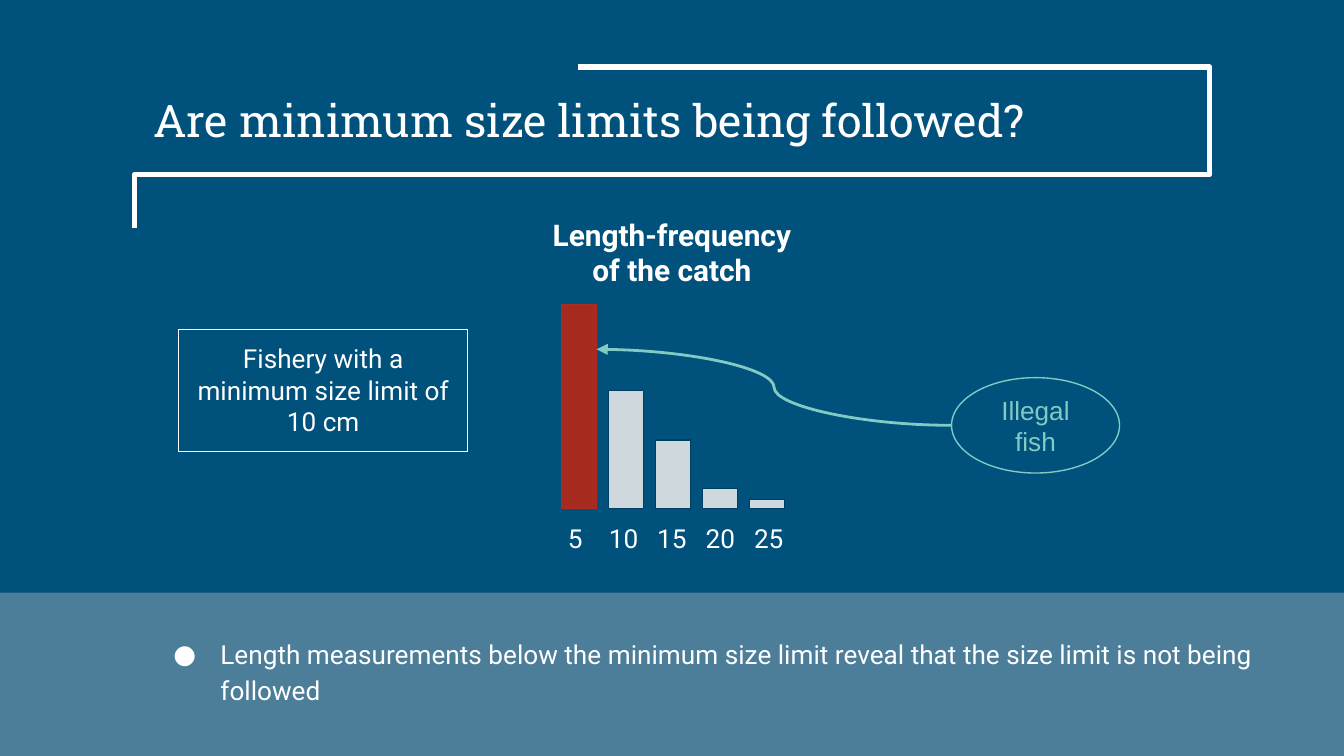
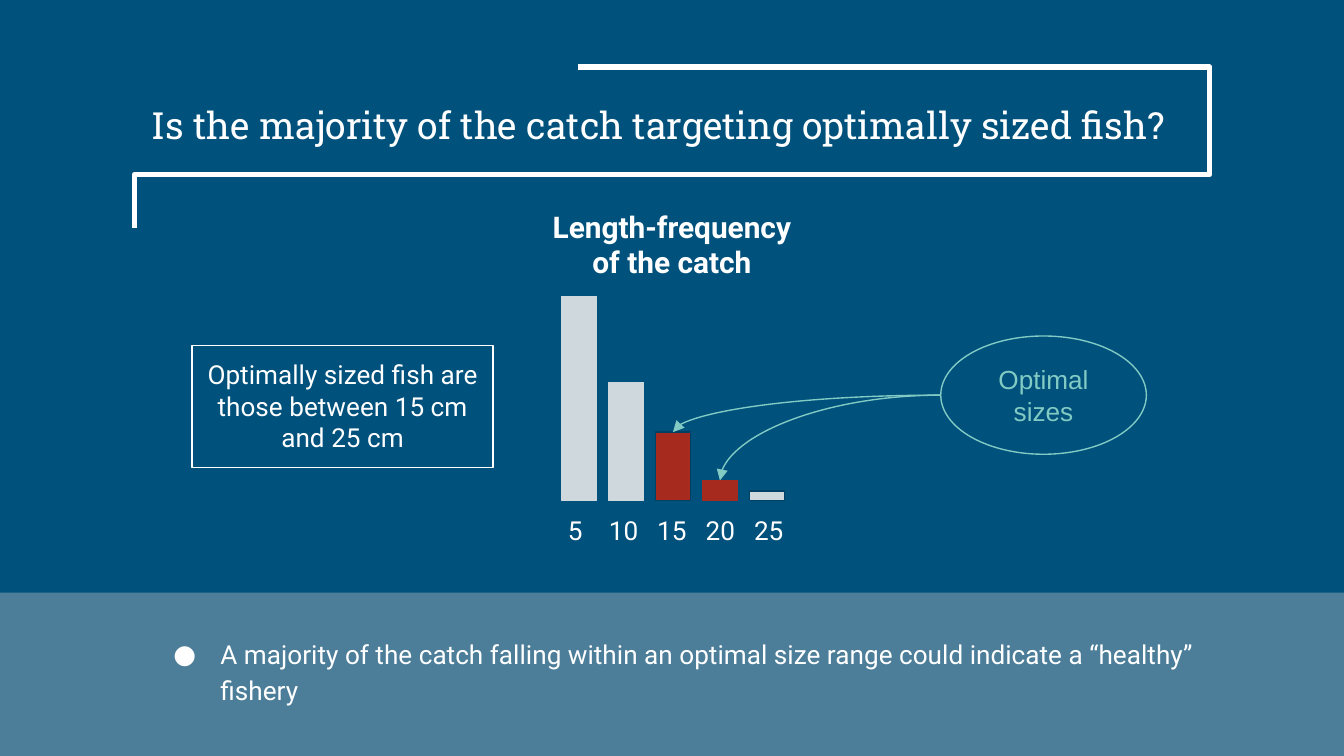
from collections import namedtuple

from lxml.etree import SubElement
from pptx import Presentation
from pptx.dml.color import RGBColor
from pptx.enum.shapes import MSO_CONNECTOR, MSO_SHAPE
from pptx.enum.text import MSO_ANCHOR, MSO_AUTO_SIZE, PP_ALIGN
from pptx.oxml.ns import qn
from pptx.util import Inches, Pt

COLORS = {
    "navy": "00517C", "band": "C9C9C9", "white": "FFFFFF", "teal": "82CBC4",
    "red": "A72A1E", "red edge": "B02C20", "grey": "CFD8DC", "edge": "004065",
}
COLS, ROWS = 100, 56.25
CELL = Inches(0.1)
Box = namedtuple("Box", "x y w h")

FRAME = Box(10.4, 4.7, 79.7, 12.7)
BAND = Box(0, 44.1, COLS, ROWS - 44.1)
LENGTHS = ["5", "10", "15", "20", "25"]
BAR_HEIGHTS = [15.2, 8.8, 5.1, 1.5, 0.7]


def cells(*values):
    return [round(v * CELL) for v in values]


def color(name):
    return RGBColor.from_string(COLORS[name])


def write(sp, text, size=14, font="Roboto", ink="white", bold=False,
          align=PP_ALIGN.CENTER, anchor=MSO_ANCHOR.TOP):
    tf = sp.text_frame
    tf.word_wrap = True
    tf.auto_size = MSO_AUTO_SIZE.NONE
    tf.vertical_anchor = anchor
    tf.margin_left = tf.margin_right = tf.margin_top = tf.margin_bottom = CELL
    p = tf.paragraphs[0]
    p.alignment = align
    p.space_before = Pt(0)
    r = p.add_run()
    r.text = text
    r.font.size = Pt(size)
    r.font.name = font
    r.font.bold = bold
    r.font.color.rgb = color(ink)
    return p


def place(sp, box):
    sp.left, sp.top, sp.width, sp.height = cells(*box)


def paint(sp, fill=None, line=None, width=0.75):
    sp.shadow.inherit = False
    if fill:
        sp.fill.solid()
        sp.fill.fore_color.rgb = color(fill)
    else:
        sp.fill.background()
    if line:
        sp.line.color.rgb = color(line)
        sp.line.width = Pt(width)
    else:
        sp.line.fill.background()


def add_shape(s, kind, box, **look):
    sp = s.shapes.add_shape(kind, *cells(*box))
    paint(sp, **look)
    return sp


def send_to_back(sp):
    sp.element.getparent().insert(2, sp.element)


def add_text(s, box, text, **style):
    write(s.shapes.add_textbox(*cells(*box)), text, **style)


def title_frame(s, box):
    right, middle = box.x + box.w, box.y + 8.3
    builder = s.shapes.build_freeform(box.x + 32.5, box.y, scale=CELL)
    builder.add_line_segments(
        [(right, box.y), (right, middle), (box.x, middle), (box.x, box.y + box.h)],
        close=False)
    sp = builder.convert_to_shape()
    paint(sp, line="white", width=3)
    send_to_back(sp)


def takeaway(s, box, text):
    band = add_shape(s, MSO_SHAPE.RECTANGLE, box, fill="band")
    fill = band.element.spPr.find(qn("a:solidFill"))
    SubElement(fill[0], qn("a:alpha"), val="38000")
    send_to_back(band)

    body = s.placeholders[1]
    place(body, Box(box.x + 10.4, box.y, 84.2, 11.5))
    p = write(body, text, align=PP_ALIGN.LEFT, anchor=MSO_ANCHOR.MIDDLE)
    p.line_spacing = 1.15
    pPr = p._p.get_or_add_pPr()
    pPr.set("marL", str(Inches(0.5)))
    pPr.set("indent", str(-Inches(0.35)))
    bullet_color = SubElement(pPr, qn("a:buClr"))
    SubElement(bullet_color, qn("a:srgbClr"), val=COLORS["white"])
    SubElement(pPr, qn("a:buFont"), typeface="Roboto")
    SubElement(pPr, qn("a:buChar"), char="●")


def length_chart(s, box, looks):
    add_text(s, Box(box.x, box.y, box.w, 7.4), "Length-frequency of the catch",
             size=16, bold=True)
    base = box.y + 22.75
    bars = []
    for i, (label, height, (fill, line)) in enumerate(zip(LENGTHS, BAR_HEIGHTS, looks)):
        bar = Box(box.x + 2.1 + 3.49 * i, base - height, 2.6, height)
        bars.append(add_shape(s, MSO_SHAPE.RECTANGLE, bar, fill=fill, line=line))
        add_text(s, Box(box.x + 0.4 + 3.6 * i, base, 5.4, 4.4), label)
    return bars


def rule_box(s, box, text):
    write(add_shape(s, MSO_SHAPE.RECTANGLE, box, line="white"), text)


def callout(s, box, text):
    sp = add_shape(s, MSO_SHAPE.OVAL, box, line="teal")
    write(sp, text, font="Arial", ink="teal", anchor=MSO_ANCHOR.MIDDLE)
    return sp


def curved_arrow(s, source, x, y, preset="curvedConnector2", width=0.75):
    start_y = source.top + source.height // 2
    line = s.shapes.add_connector(MSO_CONNECTOR.CURVE, source.left, start_y, x, y)
    line.line.color.rgb = color("teal")
    line.line.width = Pt(width)
    spPr = line.element.spPr
    spPr.find(qn("a:prstGeom")).set("prst", preset)
    SubElement(spPr.find(qn("a:ln")), qn("a:tailEnd"), type="triangle")
    SubElement(spPr, qn("a:effectLst"))


def question_slide(prs, title, title_box, title_size, message):
    s = prs.slides.add_slide(prs.slide_layouts[1])
    s.background.fill.solid()
    s.background.fill.fore_color.rgb = color("navy")
    place(s.shapes.title, title_box)
    write(s.shapes.title, title, size=title_size, font="Roboto Slab",
          align=PP_ALIGN.LEFT)
    takeaway(s, BAND, message)
    title_frame(s, FRAME)
    return s


def size_limit_slide(prs):
    s = question_slide(
        prs, "Are minimum size limits being followed?", Box(10.4, 5.9, 79.4, 9.2), 24,
        "Length measurements below the minimum size limit reveal that the size limit "
        "is not being followed")
    looks = [("red", "red edge")] + [("grey", "edge")] * 4
    bars = length_chart(s, Box(39.7, 15.1, 20.6, 27.2), looks)
    rule_box(s, Box(13.3, 24.5, 21.5, 9.1), "Fishery with a minimum size limit of 10 cm")
    illegal = callout(s, Box(70.8, 28.1, 12.5, 7.1), "Illegal fish")
    bar = bars[0]
    curved_arrow(s, illegal, bar.left + bar.width, bar.top + round(0.22 * bar.height),
                 preset="curvedConnector3", width=1.5)


def optimal_size_slide(prs):
    s = question_slide(
        prs, "Is the majority of the catch targeting optimally sized fish?",
        Box(10.3, 6.6, 79.4, 5.5), 20,
        "A majority of the catch falling within an optimal size range could indicate "
        "a “healthy” fishery")
    rule_box(s, Box(14.3, 25.7, 22.4, 9.1),
             "Optimally sized fish are those between 15 cm and 25 cm")
    optimal = callout(s, Box(70, 25, 15.3, 8.8), "Optimal sizes")
    looks = [("grey", "grey")] * 2 + [("red", "edge"), ("red", "red"), ("grey", "edge")]
    bars = length_chart(s, Box(39.7, 14.5, 20.6, 27.2), looks)
    for bar in bars[2:4]:
        curved_arrow(s, optimal, bar.left + bar.width // 2, bar.top)


def main():
    prs = Presentation()
    prs.slide_width, prs.slide_height = cells(COLS, ROWS)
    size_limit_slide(prs)
    optimal_size_slide(prs)
    prs.save("out.pptx")


if __name__ == "__main__":
    main()
